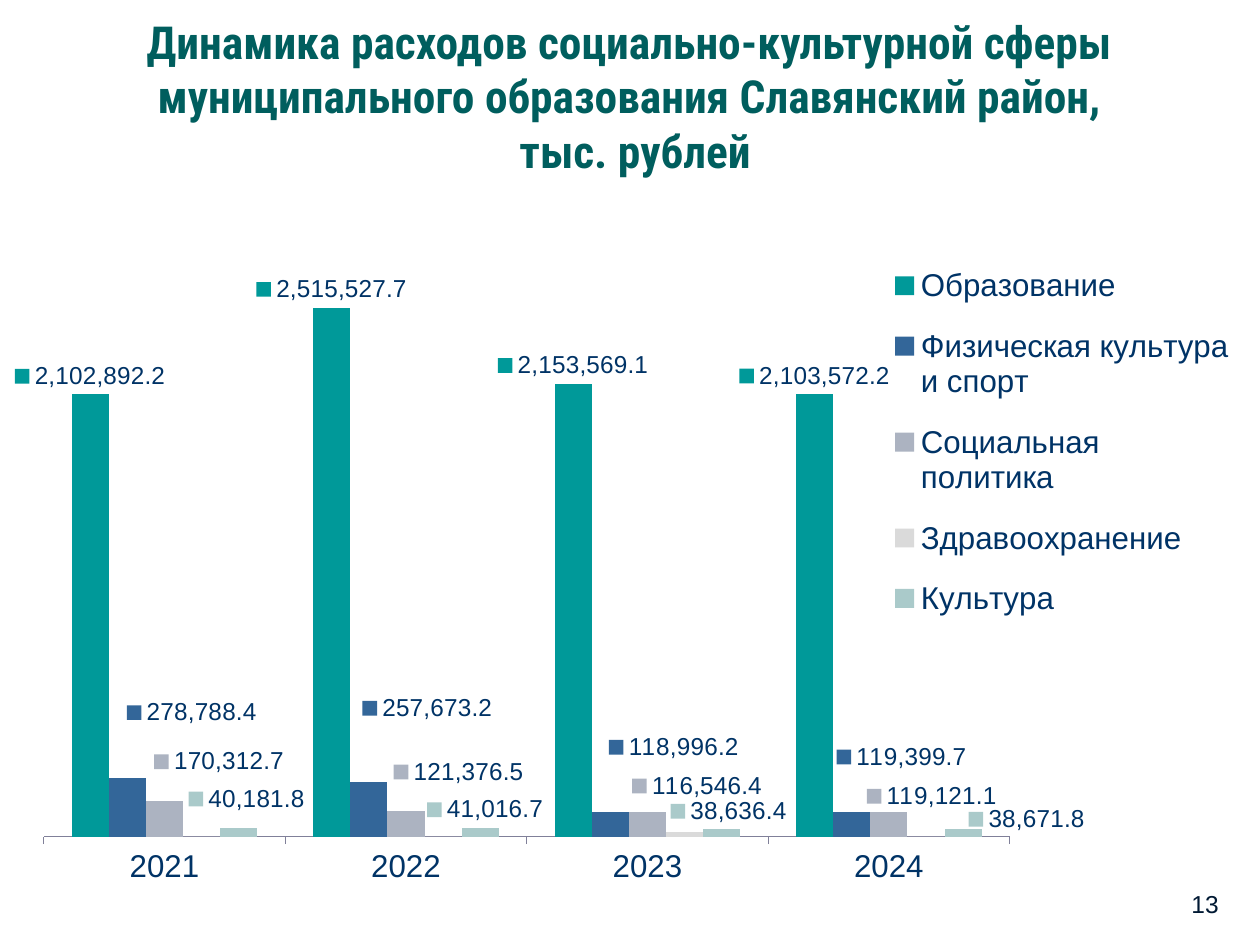
from lxml import etree
from pptx import Presentation
from pptx.chart.data import CategoryChartData
from pptx.dml.color import RGBColor
from pptx.enum.chart import XL_CHART_TYPE, XL_LABEL_POSITION, XL_LEGEND_POSITION, XL_TICK_MARK
from pptx.enum.text import MSO_ANCHOR, PP_ALIGN
from pptx.oxml.ns import qn
from pptx.util import Cm, Pt

COLUMNS = XL_CHART_TYPE.COLUMN_CLUSTERED
ABOVE = XL_LABEL_POSITION.OUTSIDE_END
RIGHT = XL_LEGEND_POSITION.RIGHT
TICK_OUT, TICK_NONE = XL_TICK_MARK.OUTSIDE, XL_TICK_MARK.NONE
MIDDLE, BOTTOM = MSO_ANCHOR.MIDDLE, MSO_ANCHOR.BOTTOM

NAVY = RGBColor(0x00, 0x33, 0x66)
GREEN = RGBColor(0x00, 0x5E, 0x5E)
DARK = RGBColor(0x00, 0x19, 0x33)
AXIS = RGBColor(0x80, 0x80, 0x99)
TEAL = RGBColor(0x00, 0x99, 0x99)
BLUE = RGBColor(0x33, 0x66, 0x99)
GREY = RGBColor(0xAC, 0xB3, 0xC1)
PALE = RGBColor(0xDA, 0xDA, 0xDA)
MINT = RGBColor(0xAA, 0xCA, 0xCA)

TITLE = ("Динамика расходов социально-культурной сферы муниципального "
         "образования Славянский район,\v тыс. рублей")
YEARS = ["2021", "2022", "2023", "2024"]
SERIES = [
    ("Образование", TEAL, [2102892.2, 2515527.7, 2153569.1, 2103572.2]),
    ("Физическая культура и спорт", BLUE, [278788.4, 257673.2, 118996.2, 119399.7]),
    ("Социальная политика", GREY, [170312.7, 121376.5, 116546.4, 119121.1]),
    ("Здравоохранение", PALE, [0, 0, 20000, 0]),
    ("Культура", MINT, [40181.8, 41016.7, 38636.4, 38671.8]),
]
SHIFTS = {
    "Физическая культура и спорт": [(1.31, -0.95), (1.19, -1.13), (1.29, -0.93), (1.01, -0.73)],
    "Социальная политика": [(1.11, -0.42), (1.07, -0.42), (1.01, -0.16), (0.87, 0.06)],
    "Культура": [(0.16, -0.22), (0.1, 0), (0.14, 0.02), (1.29, 0.18)],
}
FORMAT = "#,##0.0"


def style(font, size, color, name="Arial", bold=False):
    """Set the look of a font."""
    font.size, font.name, font.bold = Pt(size), name, bold
    font.color.rgb = color


def set_layout(parent, index, **values):
    """Give a chart part a manual layout as its child at the index."""
    for old in parent.findall(qn("c:layout")):
        parent.remove(old)
    layout = etree.Element(qn("c:layout"))
    manual = etree.SubElement(layout, qn("c:manualLayout"))
    for key, val in values.items():
        etree.SubElement(manual, qn("c:" + key)).set("val", str(val))
    parent.insert(index, layout)


def add_title(slide, box):
    """Place the slide title in the box."""
    title = slide.shapes.title
    title.left, title.top, title.width, title.height = box
    frame = title.text_frame
    frame.text = TITLE
    frame.word_wrap, frame.vertical_anchor = True, MIDDLE
    para = frame.paragraphs[0]
    para.alignment = PP_ALIGN.CENTER
    for run in para.runs:
        style(run.font, 26, GREEN, "Roboto Condensed", True)


def add_labels(series, shifts, box):
    """Show values with keys, moved by the given centimetres."""
    labels = series.data_labels
    labels.show_value = labels.show_legend_key = True
    labels.number_format, labels.number_format_is_linked = FORMAT, False
    labels.position = ABOVE
    style(labels.font, 14, NAVY)
    for lines in series._element.iter(qn("c:showLeaderLines")):
        lines.set("val", "0")
    for i in range(len(shifts)):
        label = series.points[i].data_label
        label.position = ABOVE
        style(label.font, 14, NAVY)
    for item, (x, y) in zip(series._element.iter(qn("c:dLbl")), shifts):
        item.find(qn("c:showLegendKey")).set("val", "1")
        set_layout(item, 1, x=Cm(x) / box[2], y=Cm(y) / box[3])


def add_legend(chart):
    """Place the legend at the upper right of the chart."""
    chart.has_legend = True
    legend = chart.legend
    legend.position, legend.include_in_layout = RIGHT, True
    style(legend.font, 18, NAVY)
    set_layout(legend._element, 1, xMode="edge", yMode="edge",
               x=0.71, y=0.08, w=0.28, h=0.55)


def add_axes(chart):
    """Format the year axis and hide the value axis."""
    years, scale = chart.category_axis, chart.value_axis
    years.major_tick_mark, years.minor_tick_mark = TICK_OUT, TICK_NONE
    years.format.line.color.rgb = AXIS
    style(years.tick_labels.font, 18, NAVY)
    scale.visible = scale.has_major_gridlines = False
    scale.minimum_scale, scale.maximum_scale = 0, 3000000


def add_spending(slide, box):
    """Draw the spending columns in the box."""
    data = CategoryChartData(number_format=FORMAT)
    data.categories = YEARS
    for name, color, vals in SERIES:
        data.add_series(name, vals)
    chart = slide.shapes.add_chart(COLUMNS, *box, data).chart
    chart.has_title = False
    style(chart.font, 18, NAVY)
    add_axes(chart)
    add_legend(chart)
    plot = chart.plots[0]
    plot.gap_width, plot.overlap, plot.vary_by_categories = 150, 0, False
    for series, (name, color, vals) in zip(plot.series, SERIES):
        series.format.fill.solid()
        series.format.fill.fore_color.rgb = color
        series.invert_if_negative = False
        if color != PALE:
            add_labels(series, SHIFTS.get(name, []), box)
    set_layout(plot._element.getparent(), 0, layoutTarget="inner",
               xMode="edge", yMode="edge", x=Cm(0.4) / box[2],
               y=Cm(0.42) / box[3], w=Cm(19.62) / box[2], h=Cm(12.72) / box[3])


def add_number(slide, box):
    """Place the page number in the box."""
    frame = slide.shapes.add_textbox(*box).text_frame
    frame.text = "13"
    frame.word_wrap, frame.vertical_anchor = True, BOTTOM
    para = frame.paragraphs[0]
    para.alignment = PP_ALIGN.RIGHT
    style(para.runs[0].font, 14, DARK)


def main():
    """Build and save the slide."""
    deck = Presentation()
    deck.slide_width, deck.slide_height = Cm(25.4), Cm(19.05)
    slide = deck.slides.add_slide(deck.slide_layouts[5])
    add_title(slide, (Cm(0.3), Cm(0.53), Cm(24.8), Cm(2.8)))
    add_spending(slide, (Cm(0.3), Cm(3.73), Cm(24.8), Cm(14.6)))
    add_number(slide, (Cm(18.9), Cm(17.32), Cm(5.92), Cm(1.32)))
    deck.save("out.pptx")


if __name__ == "__main__":
    main()
